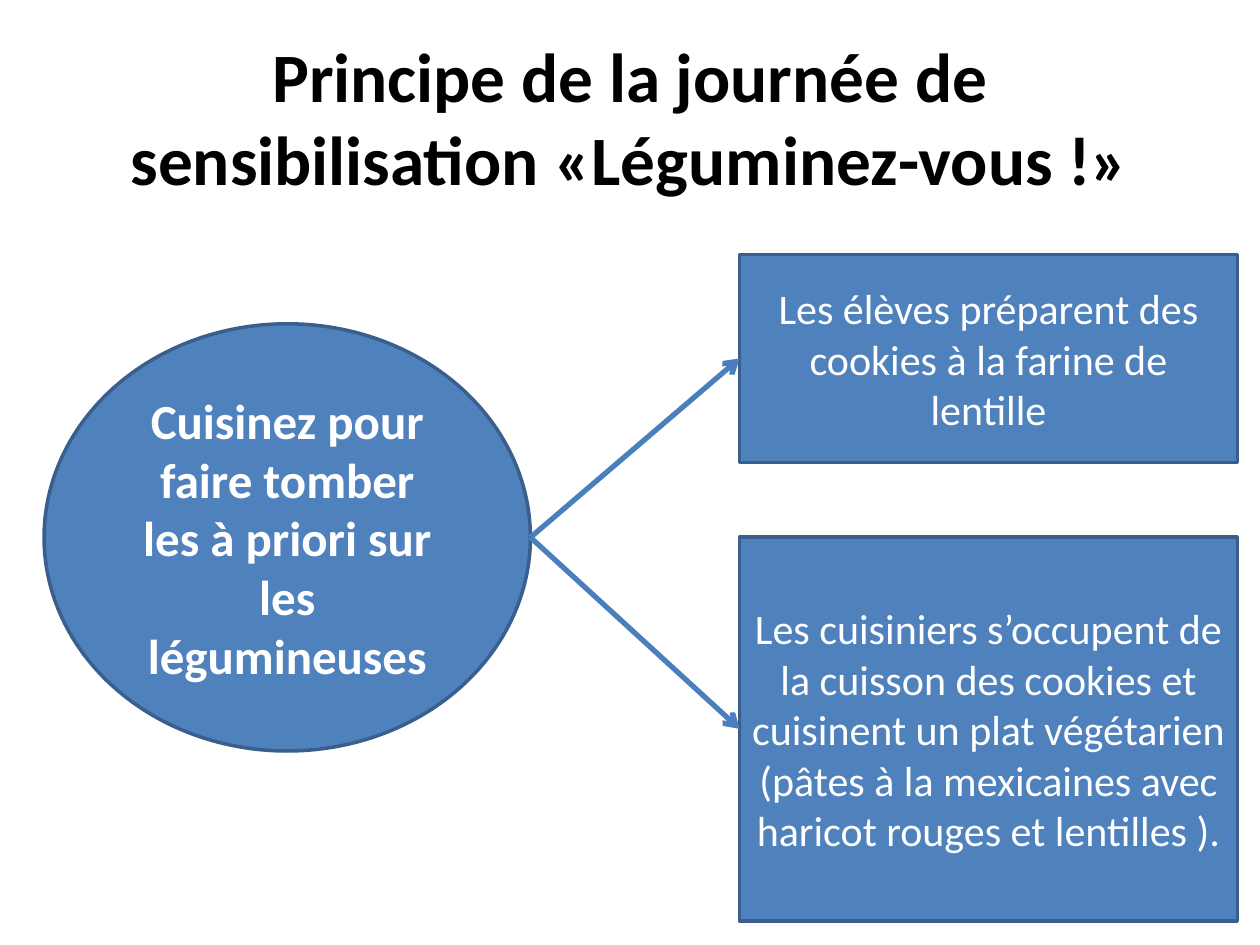
from dataclasses import dataclass
from lxml.etree import SubElement
from pptx import Presentation
from pptx.dml.color import RGBColor
from pptx.enum.shapes import MSO_CONNECTOR as Connector, MSO_SHAPE as Shape
from pptx.enum.text import MSO_ANCHOR as Anchor, PP_ALIGN as Align
from pptx.oxml.ns import qn
from pptx.util import Inches, Pt


@dataclass(frozen=True)
class Theme:
    font: str = "Calibri"
    ink: str = "000000"
    paper: str = "FFFFFF"
    fill: str = "4F81BD"
    outline: str = "3A5F8C"
    arrow: str = "4B7EBC"
    title_size: float = 39.6
    goal_size: float = 28
    task_size: float = 24
    outline_width: float = 2
    arrow_width: float = 3


THEME = Theme()

TITLE = "Principe de la journée de sensibilisation «Léguminez-vous !»"
TITLE_BOX = (0.5, 0.3, 9, 1.25)
GOAL = "Cuisinez pour faire tomber les à priori sur les légumineuses"
GOAL_BOX = (0.35, 2.57, 3.86, 3.39)
TASK_LEFT, TASK_WIDTH = 5.87, 3.95
TASKS = [
    ("Les élèves préparent des cookies à la farine de lentille", 2.02, 1.65),
    ("Les cuisiniers s’occupent de la cuisson des cookies et cuisinent un plat "
     "végétarien (pâtes à la mexicaines avec haricot rouges et lentilles ).", 4.26, 3.05),
]


def color(value):
    return RGBColor.from_string(value)


def write(holder, text, size, ink=THEME.paper, bold=False):
    frame = holder.text_frame
    frame.word_wrap = True
    frame.vertical_anchor = Anchor.MIDDLE
    paragraph = frame.paragraphs[0]
    paragraph.alignment = Align.CENTER
    run = paragraph.add_run()
    run.text = text
    run.font.name = THEME.font
    run.font.size = Pt(size)
    run.font.bold = bold
    run.font.color.rgb = color(ink)


def add_node(slide, outline, box, text, **text_format):
    node = slide.shapes.add_shape(outline, *map(Inches, box))
    node.shadow.inherit = False
    node.fill.solid()
    node.fill.fore_color.rgb = color(THEME.fill)
    node.line.color.rgb = color(THEME.outline)
    node.line.width = Pt(THEME.outline_width)
    write(node, text, **text_format)
    return node


def add_arrow(slide, goal, task):
    start = (goal.left + goal.width, goal.top + goal.height // 2)
    end = (task.left, task.top + task.height // 2)
    arrow = slide.shapes.add_connector(Connector.STRAIGHT, *start, *end)
    arrow.end_connect(task, 1)
    arrow.line.color.rgb = color(THEME.arrow)
    arrow.line.width = Pt(THEME.arrow_width)
    properties = arrow._element.spPr
    SubElement(properties.find(qn("a:ln")), qn("a:tailEnd"), type="arrow")
    SubElement(properties, qn("a:effectLst"))


def main():
    deck = Presentation()
    deck.slide_width, deck.slide_height = Inches(10), Inches(7.5)
    slide = deck.slides.add_slide(deck.slide_layouts[6])

    title = slide.shapes.add_textbox(*map(Inches, TITLE_BOX))
    write(title, TITLE, size=THEME.title_size, ink=THEME.ink, bold=True)

    goal = add_node(slide, Shape.OVAL, GOAL_BOX, GOAL, size=THEME.goal_size, bold=True)
    for text, top, height in TASKS:
        task_box = (TASK_LEFT, top, TASK_WIDTH, height)
        task = add_node(slide, Shape.RECTANGLE, task_box, text, size=THEME.task_size)
        add_arrow(slide, goal, task)

    deck.save("out.pptx")


if __name__ == "__main__":
    main()
